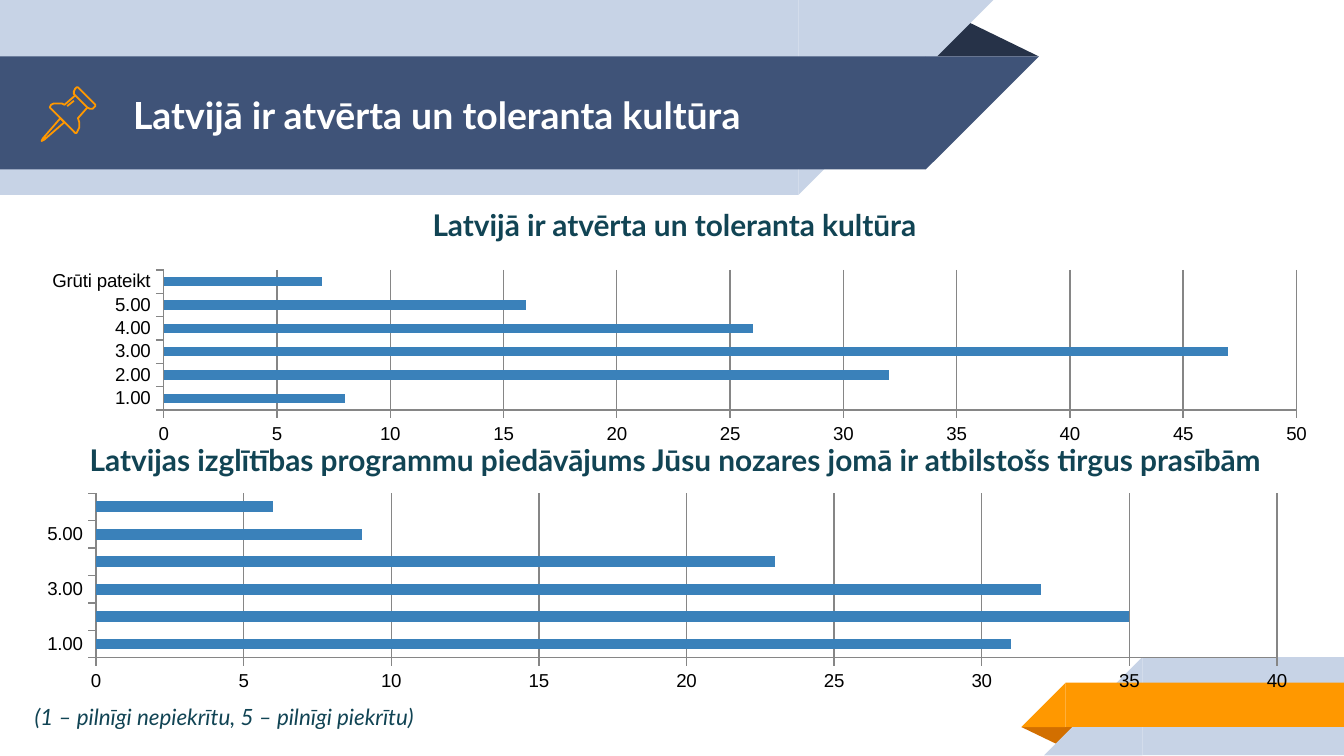
"""Build a survey slide with two bar charts under a ribbon title."""
from lxml import etree
from pptx import Presentation
from pptx import util as u
from pptx.chart.data import CategoryChartData
from pptx.dml.color import RGBColor
from pptx.enum import chart as ch, shapes, text

NAVY = RGBColor(0x3F, 0x53, 0x78)
DARK_NAVY = RGBColor(0x26, 0x32, 0x48)
PALE = RGBColor(0xC7, 0xD3, 0xE6)
ORANGE = RGBColor(0xFF, 0x98, 0x00)
DARK_ORANGE = RGBColor(0xD2, 0x6F, 0x00)
TEAL = RGBColor(0x11, 0x44, 0x54)
BLUE = RGBColor(0x3A, 0x81, 0xBA)
GREY = RGBColor(0x86, 0x86, 0x86)
WHITE = RGBColor(0xFF, 0xFF, 0xFF)
BLACK = RGBColor(0, 0, 0)

deck = Presentation()
deck.slide_width = u.Inches(10)
deck.slide_height = u.Inches(10) * 9 // 16
page = deck.slides.add_slide(deck.slide_layouts[5])


def write(box, words, size, color, wrap=True):
    frame = box.text_frame
    frame.word_wrap = wrap
    frame.text = words
    paragraph = frame.paragraphs[0]
    paragraph.font.name = "Lato"
    paragraph.font.size = u.Pt(size)
    paragraph.font.color.rgb = color
    return paragraph


def add_bars(area, categories, values):
    data = CategoryChartData()
    data.categories = categories
    data.add_series("Series 1", values)
    chart = page.shapes.add_chart(
        ch.XL_CHART_TYPE.BAR_CLUSTERED, *map(u.Inches, area), data).chart
    chart.has_title = chart.has_legend = False
    chart.font.name = "Arial"
    chart.font.size = u.Pt(10)
    chart.font.color.rgb = BLACK
    plot = chart.plots[0]
    plot.gap_width = 150
    plot.vary_by_categories = False
    fill = plot.series[0].format.fill
    fill.solid()
    fill.fore_color.rgb = BLUE
    for axis in (chart.category_axis, chart.value_axis):
        axis.major_tick_mark = ch.XL_TICK_MARK.OUTSIDE
        axis.minor_tick_mark = ch.XL_TICK_MARK.NONE
        axis.format.line.color.rgb = GREY
    chart.value_axis.has_major_gridlines = True
    chart.value_axis.major_gridlines.format.line.color.rgb = GREY
    return chart


RECT = shapes.MSO_SHAPE.RECTANGLE
CORNER = shapes.MSO_SHAPE.RIGHT_TRIANGLE
FOLD = shapes.MSO_SHAPE.ISOSCELES_TRIANGLE
ribbons = [
    (FOLD, (6.88, 0.14, 0.85, 0.28), DARK_NAVY, 0, False),
    (RECT, (0, 0, 5.94, 1.45), PALE, 0, False),
    (CORNER, (5.94, 0, 1.45, 1.45), PALE, 180, True),
    (RECT, (0, 0.42, 6.89, 0.84), NAVY, 0, False),
    (CORNER, (6.89, 0.42, 0.84, 0.84), NAVY, 180, True),
    (FOLD, (7.6, 5.41, 0.43, 0.14), DARK_ORANGE, 180, False),
    (RECT, (8.5, 4.89, 1.5, 0.73), PALE, 0, False),
    (CORNER, (7.77, 4.89, 0.73, 0.73), PALE, 0, True),
    (RECT, (7.93, 5.08, 2.07, 0.33), ORANGE, 0, False),
    (CORNER, (7.6, 5.08, 0.33, 0.33), ORANGE, 0, True),
]
for kind, area, color, turn, flipped in ribbons:
    ribbon = page.shapes.add_shape(kind, *map(u.Inches, area))
    ribbon.shadow.inherit = False
    ribbon.fill.solid()
    ribbon.fill.fore_color.rgb = color
    ribbon.line.fill.background()
    ribbon.rotation = turn
    if flipped:
        ribbon.element.spPr.xfrm.set("flipH", "1")
    if kind == FOLD:
        ribbon.adjustments[0] = 0.324

note = page.shapes.add_textbox(*map(u.Inches, (0.16, 5.18, 3.28, 0.3)))
write(note, "(1 – pilnīgi nepiekrītu, 5 – pilnīgi piekrītu)",
      12, TEAL, False).font.italic = True

grades = ["1.00", "2.00", "3.00", "4.00", "5.00"]
culture = add_bars((0.17, 1.83, 9.71, 1.61), grades + ["Grūti pateikt"],
                   (8, 32, 47, 26, 16, 7))
plot_area = culture.element.chart.plotArea
namespace = "{http://schemas.openxmlformats.org/drawingml/2006/chart}"
for old in plot_area.findall(namespace + "layout"):
    plot_area.remove(old)
layout = etree.Element(namespace + "layout")
manual = etree.SubElement(layout, namespace + "manualLayout")
for tag, value in (("layoutTarget", "inner"), ("xMode", "edge"), ("yMode", "edge"),
                   ("x", "0.108"), ("y", "0.111"), ("w", "0.868"), ("h", "0.648")):
    etree.SubElement(manual, namespace + tag).set("val", value)
plot_area.insert(0, layout)

title = page.shapes.title
title.left, title.top, title.width, title.height = map(u.Inches, (0.89, 0.43, 6.01, 0.84))
heading = write(title, "Latvijā ir atvērta un toleranta kultūra", 20, WHITE)
heading.font.bold = True
heading.alignment = text.PP_ALIGN.LEFT
frame = title.text_frame
frame.vertical_anchor = text.MSO_ANCHOR.MIDDLE
frame.margin_left = frame.margin_right = u.Inches(0.1)
frame.margin_top = frame.margin_bottom = u.Inches(0.1)
title.element.getparent().append(title.element)

needle = [(45, 88), (32, 103), (31, 105), (33, 104), (48, 91)]
cap = [(56, 71), (65, 80), (67, 81), (69, 81), (71, 79), (71, 78),
       (58, 65), (57, 65), (56, 66), (55, 68), (55, 70)]
body = [(56, 71), (48, 78), (46, 77), (43, 77), (40, 77), (38, 78), (37, 80),
        (38, 81), (55, 98), (56, 99), (57, 99), (58, 97), (59, 95), (59, 91),
        (58, 88), (65, 80)]
shine = [(50, 79), (55, 75)]
for points, closed in ((needle, True), (cap, True), (body, False), (shine, False)):
    builder = page.shapes.build_freeform(*points[0], scale=u.Inches(0.01))
    builder.add_line_segments(points[1:], close=closed)
    pin = builder.convert_to_shape()
    pin.shadow.inherit = False
    pin.fill.background()
    pin.line.color.rgb = ORANGE
    pin.line.width = u.Pt(0.96)

caption = page.shapes.add_textbox(*map(u.Inches, (3.12, 1.49, 4.43, 0.37)))
write(caption, "Latvijā ir atvērta un toleranta kultūra", 16, TEAL, False).font.bold = True

add_bars((0.16, 3.64, 9.61, 1.54), grades + [" Grūti pateikt"], (31, 35, 32, 23, 9, 6))

caption = page.shapes.add_textbox(*map(u.Inches, (0.24, 3.24, 9.63, 0.64)))
paragraph = write(caption, "Latvijas izglītības programmu piedāvājums Jūsu nozares jomā "
                  "ir atbilstošs tirgus prasībām ", 16, TEAL)
paragraph.font.bold = True
paragraph.alignment = text.PP_ALIGN.CENTER

deck.save("out.pptx")
